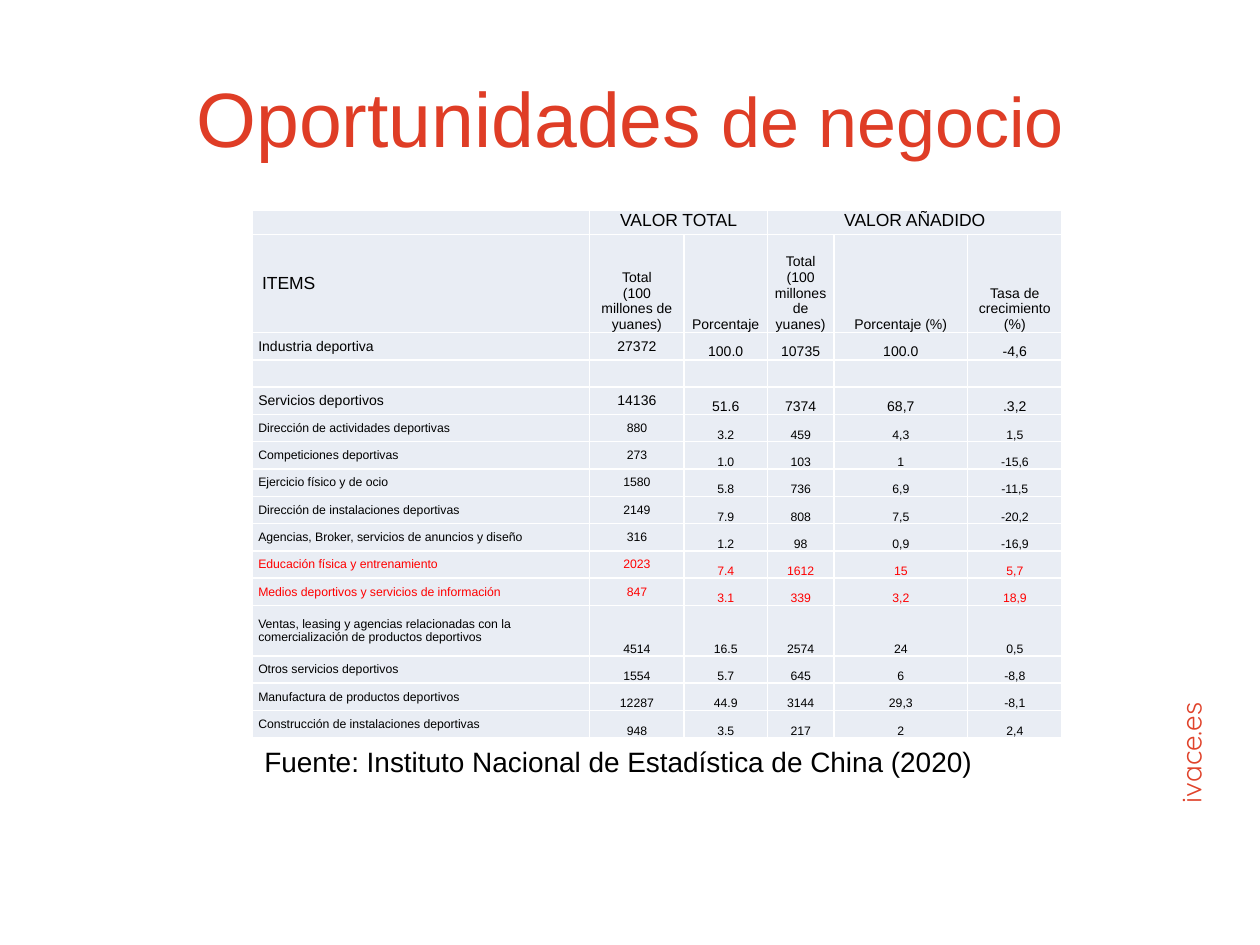
import pptx
import pptx.util
import pptx.dml.color
import pptx.enum.text
import pptx.oxml
import pptx.oxml.ns
from pptx.util import Inches

COLORS = {
    "title": "DF3D26",
    "site": "E0432B",
    "text": "000000",
    "highlight": "FF0000",
    "cell": "E9EDF4",
    "border": "FFFFFF",
}
ALIGN = pptx.enum.text.PP_ALIGN
ANCHOR = pptx.enum.text.MSO_ANCHOR

COLUMN_WIDTHS = [2.68, 0.75, 0.66, 0.53, 1.06, 0.75]
TABLE_HEIGHT = 4.19
GROUP_HEIGHT, HEADING_HEIGHT, SALES_HEIGHT = 0.19, 0.78, 0.4
GROUPS = ["", "VALOR TOTAL", "", "VALOR AÑADIDO", "", ""]
HEADINGS = [
    "ITEMS",
    "Total\n(100 millones de yuanes)",
    "Porcentaje",
    "Total (100 millones de yuanes)",
    "Porcentaje (%)",
    "Tasa de crecimiento (%)",
]
ITEMS = [
    ["Industria deportiva", "27372", "100.0", "10735", "100.0", "-4,6"],
    ["", "", "", "", "", ""],
    ["Servicios deportivos", "14136", "51.6", "7374", "68,7", ".3,2"],
    ["Dirección de actividades deportivas", "880", "3.2", "459", "4,3", "1,5"],
    ["Competiciones deportivas", "273", "1.0", "103", "1", "-15,6"],
    ["Ejercicio físico y de ocio", "1580", "5.8", "736", "6,9", "-11,5"],
    ["Dirección de instalaciones deportivas", "2149", "7.9", "808", "7,5", "-20,2"],
    ["Agencias, Broker, servicios de anuncios y diseño", "316", "1.2", "98", "0,9", "-16,9"],
    ["Educación física y entrenamiento", "2023", "7.4", "1612", "15", "5,7"],
    ["Medios deportivos y servicios de información", "847", "3.1", "339", "3,2", "18,9"],
    ["Ventas, leasing y agencias relacionadas con la comercialización de productos deportivos",
     "4514", "16.5", "2574", "24", "0,5"],
    ["Otros servicios deportivos", "1554", "5.7", "645", "6", "-8,8"],
    ["Manufactura de productos deportivos", "12287", "44.9", "3144", "29,3", "-8,1"],
    ["Construcción de instalaciones deportivas", "948", "3.5", "217", "2", "2,4"],
]
MAIN_ITEMS = 3
HIGHLIGHTED = (8, 9)
SALES = 10


class SlideBuilder:
    def __init__(self, slide, font="Arial"):
        self.slide = slide
        self.font = font

    def style(self, font, size, color, name=None):
        font.name = name or self.font
        font.size = pptx.util.Pt(size)
        font.color.rgb = pptx.dml.color.RGBColor.from_string(COLORS[color])

    def title(self, left, top, width, height, parts):
        box = self.slide.shapes.title
        box.left, box.top = Inches(left), Inches(top)
        box.width, box.height = Inches(width), Inches(height)
        box.text_frame.vertical_anchor = ANCHOR.MIDDLE
        para = box.text_frame.paragraphs[0]
        para.alignment = ALIGN.CENTER
        for text, size in parts:
            span = para.add_run()
            span.text = text
            self.style(span.font, size, "title")

    def text(self, left, top, width, height, text, size, color, name=None, rotation=0):
        box = self.slide.shapes.add_textbox(
            Inches(left), Inches(top), Inches(width), Inches(height))
        box.rotation = rotation
        box.text_frame.word_wrap = True
        para = box.text_frame.paragraphs[0]
        para.text = text
        self.style(para.font, size, color, name)

    def table(self, left, top, widths, heights):
        frame = self.slide.shapes.add_table(
            len(heights), len(widths), Inches(left), Inches(top),
            Inches(sum(widths)), Inches(sum(heights)))
        table = frame.table
        table.first_row = table.horz_banding = False
        for column, width in zip(table.columns, widths):
            column.width = Inches(width)
        for row, height in zip(table.rows, heights):
            row.height = Inches(height)
        return table

    def cell(self, cell, text, size, anchor, alignment=ALIGN.CENTER, color="text"):
        cell.margin_left = cell.margin_right = Inches(0.05)
        cell.margin_top = cell.margin_bottom = 0
        cell.vertical_anchor = anchor
        self.borders(cell)
        cell.fill.solid()
        cell.fill.fore_color.rgb = pptx.dml.color.RGBColor.from_string(COLORS["cell"])
        cell.text_frame.text = text
        for para in cell.text_frame.paragraphs:
            para.alignment = alignment
            self.style(para.font, size, color)
            if not text:
                ending = pptx.oxml.parse_xml(
                    f'<a:endParaRPr {pptx.oxml.ns.nsdecls("a")} sz="{size * 100}"/>')
                para._p.append(ending)

    def borders(self, cell):
        properties = cell._tc.get_or_add_tcPr()
        for side in ("lnL", "lnR", "lnT", "lnB"):
            properties.append(pptx.oxml.parse_xml(
                f'<a:{side} {pptx.oxml.ns.nsdecls("a")} w="12700"><a:solidFill>'
                f'<a:srgbClr val="{COLORS["border"]}"/></a:solidFill></a:{side}>'))


def fill_table(builder):
    fixed = GROUP_HEIGHT + HEADING_HEIGHT + SALES_HEIGHT
    item_heights = [(TABLE_HEIGHT - fixed) / (len(ITEMS) - 1)] * len(ITEMS)
    item_heights[SALES] = SALES_HEIGHT
    table = builder.table(
        2, 1.67, COLUMN_WIDTHS, [GROUP_HEIGHT, HEADING_HEIGHT] + item_heights)

    for column, text in enumerate(GROUPS):
        builder.cell(table.cell(0, column), text, 10, ANCHOR.TOP)
    table.cell(0, 1).merge(table.cell(0, 2))
    table.cell(0, 3).merge(table.cell(0, 5))

    for column, text in enumerate(HEADINGS):
        builder.cell(table.cell(1, column), text, 8, ANCHOR.BOTTOM)
    builder.cell(table.cell(1, 0), HEADINGS[0], 10, ANCHOR.MIDDLE, ALIGN.LEFT)
    table.cell(1, 0).margin_left = Inches(0.08)

    for index, item in enumerate(ITEMS):
        size = 8 if index < MAIN_ITEMS else 7
        color = "highlight" if index in HIGHLIGHTED else "text"
        for column, text in enumerate(item):
            centred = column == 0 or (column == 1 and index < SALES)
            builder.cell(
                table.cell(index + 2, column), text, size,
                ANCHOR.MIDDLE if centred else ANCHOR.BOTTOM,
                ALIGN.CENTER if column else ALIGN.LEFT, color)


def main():
    deck = pptx.Presentation()
    deck.slide_width, deck.slide_height = Inches(10), Inches(7.5)
    page = deck.slides.add_slide(deck.slide_layouts[5])
    builder = SlideBuilder(page)
    builder.text(8.45, 4.91, 2.38, 0.75, "ivace.es", 16, "site", "Quicksand", 270)
    builder.title(0.5, 0.3, 9, 1.25, [("Oportunidades", 44), (" de negocio", 40)])
    fill_table(builder)
    builder.text(2, 5.86, 6.59, 0.37,
                 "Fuente: Instituto Nacional de Estadística de China (2020)", 16, "text")
    deck.save("out.pptx")


if __name__ == "__main__":
    main()
